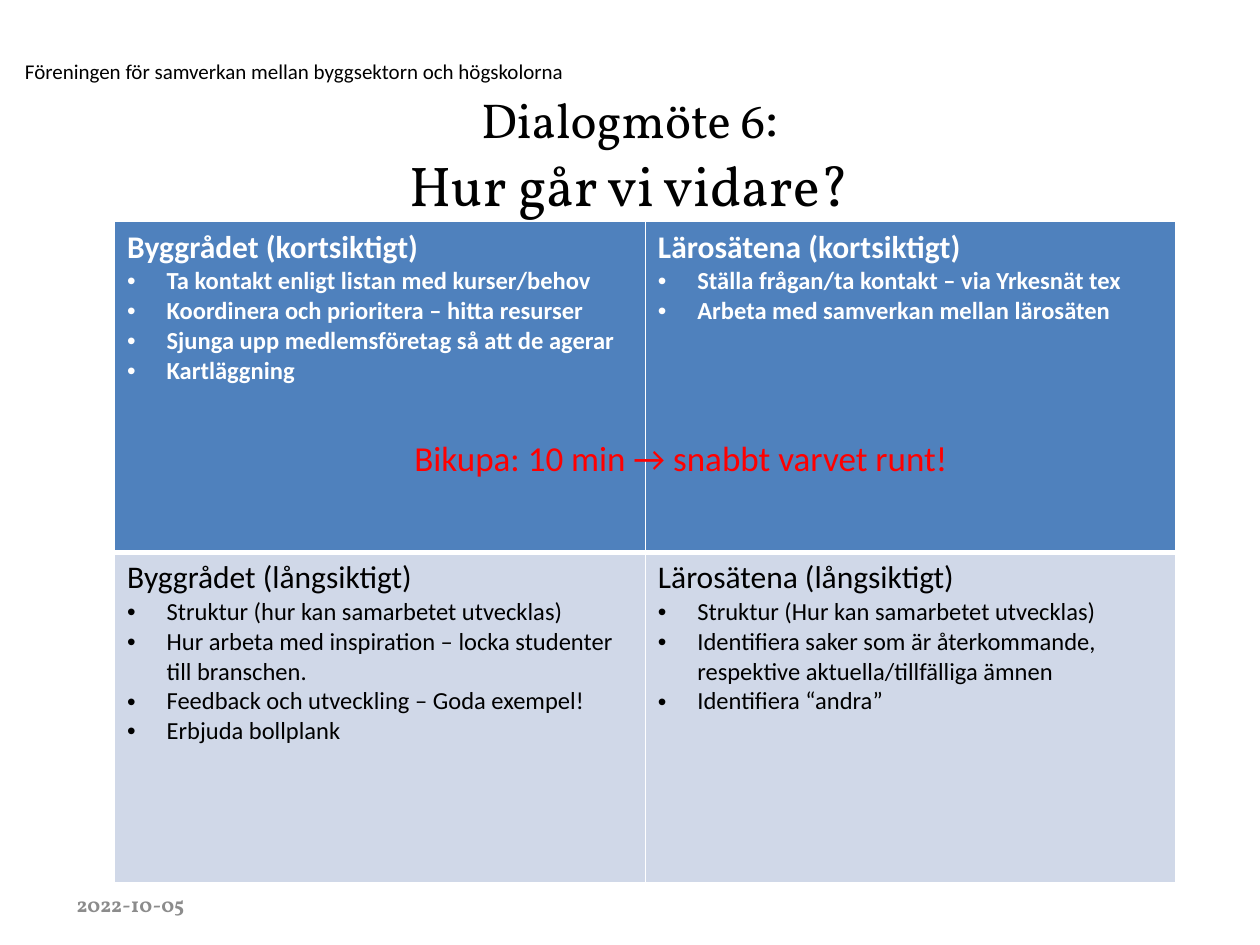
from lxml import etree
from pptx import Presentation
from pptx.dml.color import RGBColor
from pptx.enum.text import MSO_ANCHOR, MSO_AUTO_SIZE, PP_ALIGN
from pptx.oxml.ns import qn
from pptx.util import Pt

MIDDLE = MSO_ANCHOR.MIDDLE
TOP = MSO_ANCHOR.TOP
NO_AUTOFIT = MSO_AUTO_SIZE.NONE
CENTER = PP_ALIGN.CENTER

BLACK = RGBColor(0x00, 0x00, 0x00)
WHITE = RGBColor(0xFF, 0xFF, 0xFF)
GRAY = RGBColor(0x8C, 0x8C, 0x8C)
RED = RGBColor(0xFF, 0x00, 0x00)
BLUE = RGBColor(0x4F, 0x81, 0xBD)
PALE_BLUE = RGBColor(0xD0, 0xD8, 0xE8)

TITLE_ONLY = 5
BODY_FONT = "Calibri"
TITLE_FONT = "Vollkorn"
INDENT = Pt(22.5)

ROWS = [
    {
        "fill": BLUE,
        "font": {"color": WHITE, "bold": True},
        "borders": {"a:lnL": 1, "a:lnR": 1, "a:lnT": 1, "a:lnB": 3},
        "cells": [
            ("Byggrådet (kortsiktigt)", [
                "Ta kontakt enligt listan med kurser/behov",
                "Koordinera och prioritera – hitta resurser",
                "Sjunga upp medlemsföretag så att de agerar",
                "Kartläggning",
            ]),
            ("Lärosätena (kortsiktigt)", [
                "Ställa frågan/ta kontakt – via Yrkesnät tex",
                "Arbeta med samverkan mellan lärosäten",
            ]),
        ],
    },
    {
        "fill": PALE_BLUE,
        "font": {"color": BLACK, "bold": False},
        "borders": {"a:lnL": 1, "a:lnR": 1, "a:lnT": 3, "a:lnB": 1},
        "cells": [
            ("Byggrådet (långsiktigt)", [
                "Struktur (hur kan samarbetet utvecklas)",
                "Hur arbeta med inspiration – locka studenter till branschen.",
                "Feedback och utveckling – Goda exempel!",
                "Erbjuda bollplank",
            ]),
            ("Lärosätena (långsiktigt)", [
                "Struktur (Hur kan samarbetet utvecklas)",
                "Identifiera saker som är återkommande, respektive aktuella/tillfälliga ämnen",
                "Identifiera “andra”",
            ]),
        ],
    },
]


class SlideBuilder:
    def __init__(self, presentation):
        layout = presentation.slide_layouts[TITLE_ONLY]
        self.slide = presentation.slides.add_slide(layout)

    def run(self, paragraph, text, color=BLACK, **formats):
        run = paragraph.add_run()
        run.text = text
        run.font.color.rgb = color
        for name, value in ({"name": BODY_FONT} | formats).items():
            setattr(run.font, name, value)

    def frame(self, text_frame, anchor):
        formats = {"word_wrap": True, "auto_size": NO_AUTOFIT, "vertical_anchor": anchor}
        for name, value in formats.items():
            setattr(text_frame, name, value)

    def title(self, box, first_line, second_line):
        title = self.slide.shapes.title
        for name, value in zip(("left", "top", "width", "height"), box):
            setattr(title, name, Pt(value))
        self.frame(title.text_frame, MIDDLE)
        paragraph = title.text_frame.paragraphs[0]
        paragraph.alignment = CENTER
        self.run(paragraph, first_line, name=TITLE_FONT, size=Pt(28))
        self.run(paragraph, ":", name=TITLE_FONT, size=Pt(32))
        paragraph.add_line_break()
        line_break = paragraph._p.find(qn("a:br"))
        etree.SubElement(line_break, qn("a:rPr"), sz="3200")
        self.run(paragraph, second_line, name=TITLE_FONT, size=Pt(32))

    def text(self, box, text, anchor=MIDDLE, line_spacing=None, **formats):
        shape = self.slide.shapes.add_textbox(*map(Pt, box))
        self.frame(shape.text_frame, anchor)
        paragraph = shape.text_frame.paragraphs[0]
        paragraph.line_spacing = line_spacing
        self.run(paragraph, text, **formats)

    def bullet(self, paragraph):
        properties = paragraph._p.get_or_add_pPr()
        properties.set("marL", str(INDENT))
        properties.set("indent", str(-INDENT))
        etree.SubElement(properties, qn("a:buFont"), typeface="Arial")
        etree.SubElement(properties, qn("a:buChar"), char="•")

    def cell(self, cell, heading, items, row):
        text_frame = cell.text_frame
        self.run(text_frame.paragraphs[0], heading, size=Pt(18), **row["font"])
        for item in items:
            paragraph = text_frame.add_paragraph()
            self.bullet(paragraph)
            self.run(paragraph, item, size=Pt(14), **row["font"])
        properties = cell._tc.get_or_add_tcPr()
        for tag, width in row["borders"].items():
            line = etree.SubElement(properties, qn(tag), w=str(Pt(width)))
            fill = etree.SubElement(line, qn("a:solidFill"))
            etree.SubElement(fill, qn("a:srgbClr"), val=str(WHITE))
        cell.fill.solid()
        cell.fill.fore_color.rgb = row["fill"]

    def table(self, box, rows):
        column_count = len(rows[0]["cells"])
        shape = self.slide.shapes.add_table(len(rows), column_count, *map(Pt, box))
        for row_index, row in enumerate(rows):
            for column_index, (heading, items) in enumerate(row["cells"]):
                cell = shape.table.cell(row_index, column_index)
                self.cell(cell, heading, items, row)


def main():
    presentation = Presentation()
    presentation.slide_width = Pt(720)
    presentation.slide_height = Pt(540)
    builder = SlideBuilder(presentation)
    builder.text((7.2, 32.4, 462, 20),
                 "Föreningen för samverkan mellan byggsektorn och högskolorna",
                 anchor=TOP, line_spacing=Pt(12), size=Pt(12))
    builder.title((36, 37.5, 648, 96.5), "Dialogmöte 6", "Hur går vi vidare?")
    builder.text((36.7, 502.5, 168, 28.8), "2022-10-05",
                 name=TITLE_FONT, size=Pt(12), color=GRAY, bold=True)
    builder.table((65.5, 126.7, 606.6, 378), ROWS)
    builder.text((229.7, 213.1, 374.4, 96.5), "Bikupa: 10 min → snabbt varvet runt!",
                 size=Pt(20), color=RED)
    presentation.save("out.pptx")


if __name__ == "__main__":
    main()
